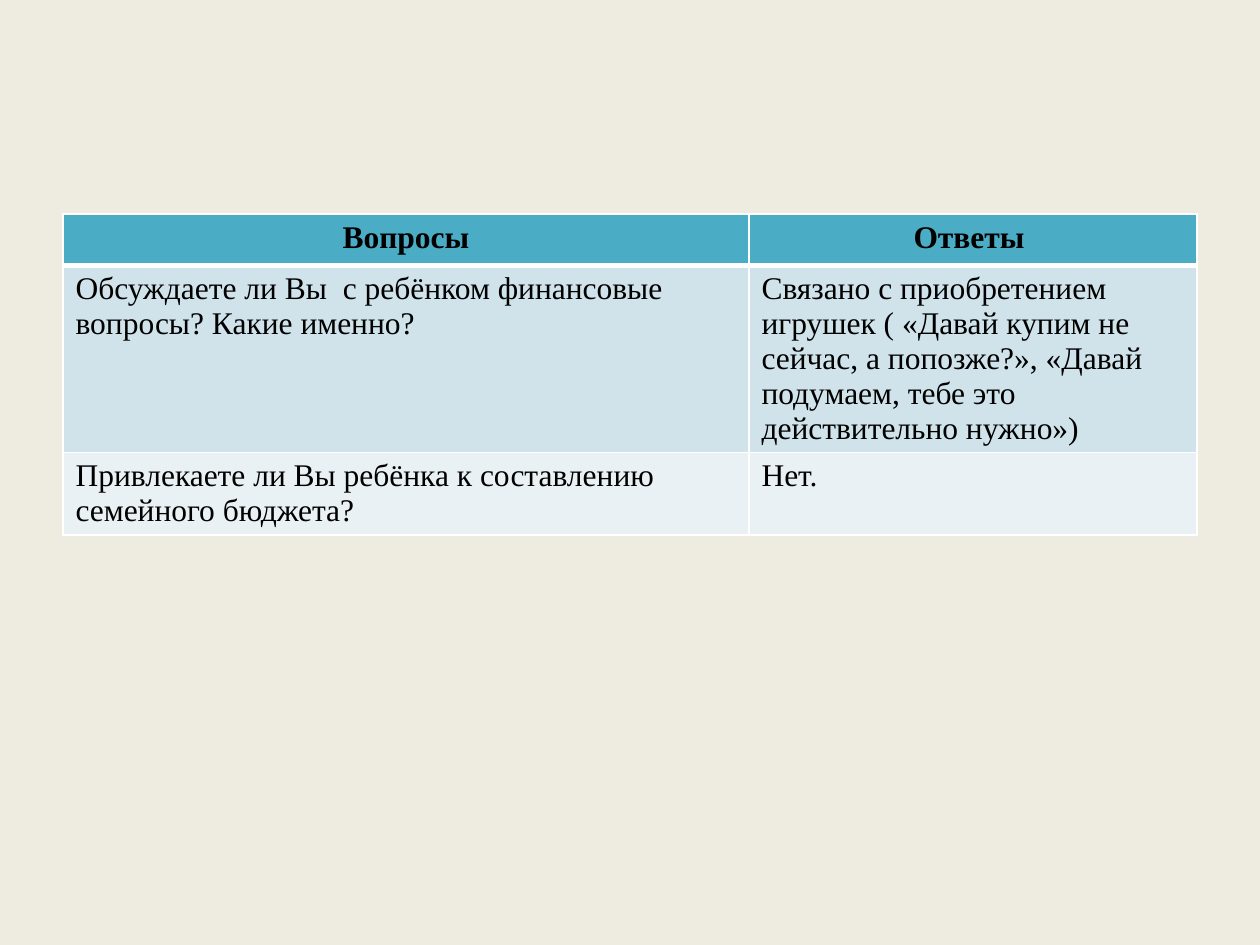
from lxml.etree import SubElement
from pptx import Presentation
from pptx.dml.color import RGBColor
from pptx.enum.text import PP_ALIGN
from pptx.oxml.ns import qn
from pptx.util import Pt

COLORS = {
    "background": "EEECE1",
    "header": "4BACC6",
    "odd_row": "D0E3EA",
    "even_row": "E9F1F5",
    "border": "FFFFFF",
    "text": "000000",
}
ROWS = [
    ("Вопросы", "Ответы "),
    (
        "Обсуждаете ли Вы  с ребёнком финансовые вопросы? Какие именно?",
        "Связано с приобретением игрушек ( «Давай купим не сейчас, а попозже?», "
        "«Давай подумаем, тебе это действительно нужно»)",
    ),
    ("Привлекаете ли Вы ребёнка к составлению семейного бюджета?", "Нет."),
]
ROW_FILLS = ["header", "odd_row", "even_row"]
ROW_HEIGHTS = [29.2, 106.8, 47.2]
COLUMN_WIDTHS = [392, 256]


def add_border(cell, side, width):
    properties = cell._tc.get_or_add_tcPr()
    line = SubElement(properties, qn(f"a:{side}"), w=str(Pt(width)))
    fill = SubElement(line, qn("a:solidFill"))
    SubElement(fill, qn("a:srgbClr"), val=COLORS["border"])


presentation = Presentation()
presentation.slide_width = Pt(720)
presentation.slide_height = Pt(540)
slide = presentation.slides.add_slide(presentation.slide_layouts[6])
slide.background.fill.solid()
slide.background.fill.fore_color.rgb = RGBColor.from_string(COLORS["background"])

table = slide.shapes.add_table(
    len(ROWS), len(COLUMN_WIDTHS), Pt(36), Pt(122.4),
    Pt(sum(COLUMN_WIDTHS)), Pt(sum(ROW_HEIGHTS)),
).table
for column, width in zip(table.columns, COLUMN_WIDTHS):
    column.width = Pt(width)

for row_index, texts in enumerate(ROWS):
    table.rows[row_index].height = Pt(ROW_HEIGHTS[row_index])
    is_header = row_index == 0
    for column_index, text in enumerate(texts):
        cell = table.cell(row_index, column_index)
        cell.text_frame.text = text
        paragraph = cell.text_frame.paragraphs[0]
        paragraph.alignment = PP_ALIGN.CENTER if is_header else PP_ALIGN.LEFT
        font = paragraph.runs[0].font
        font.name = "Times New Roman"
        font.size = Pt(18)
        font.bold = is_header
        font.color.rgb = RGBColor.from_string(COLORS["text"])
        for side in ("lnL", "lnR", "lnT", "lnB"):
            below_header = (row_index, side) in ((0, "lnB"), (1, "lnT"))
            add_border(cell, side, 3 if below_header else 1)
        cell.fill.solid()
        cell.fill.fore_color.rgb = RGBColor.from_string(COLORS[ROW_FILLS[row_index]])

presentation.save("out.pptx")
